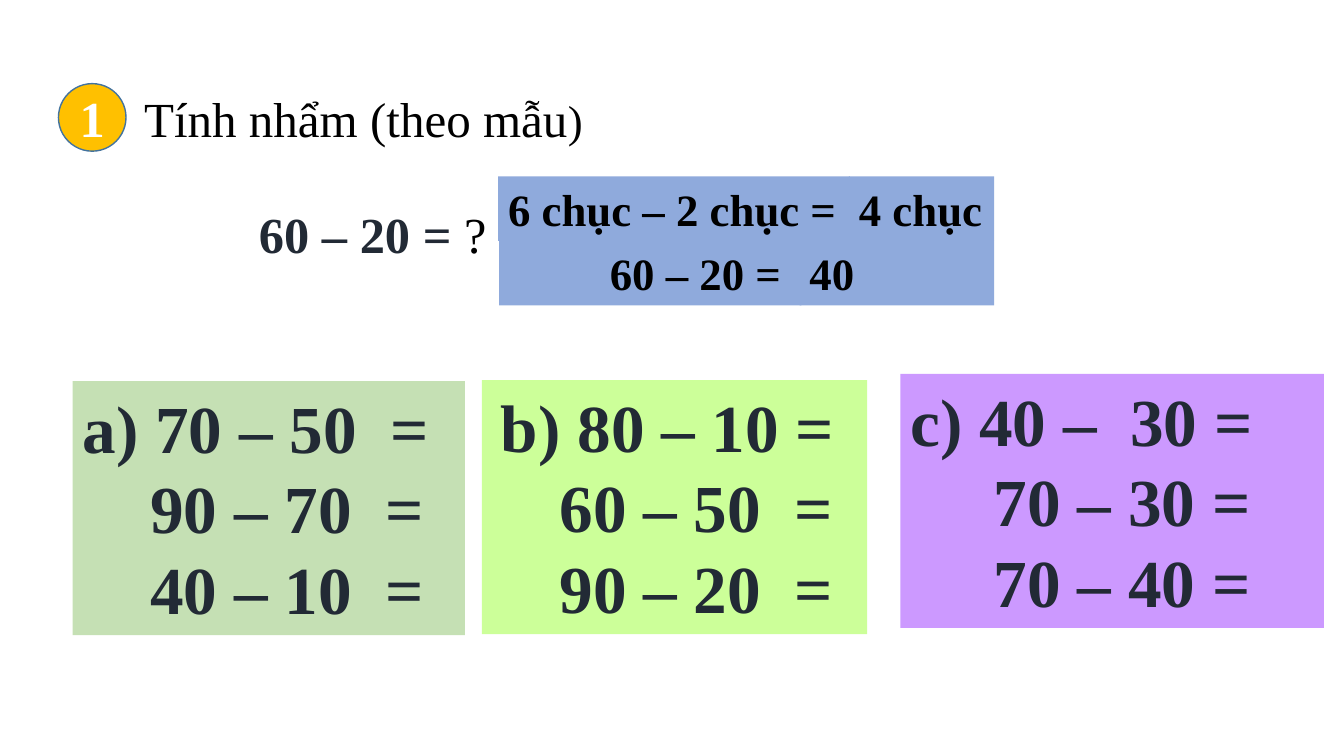
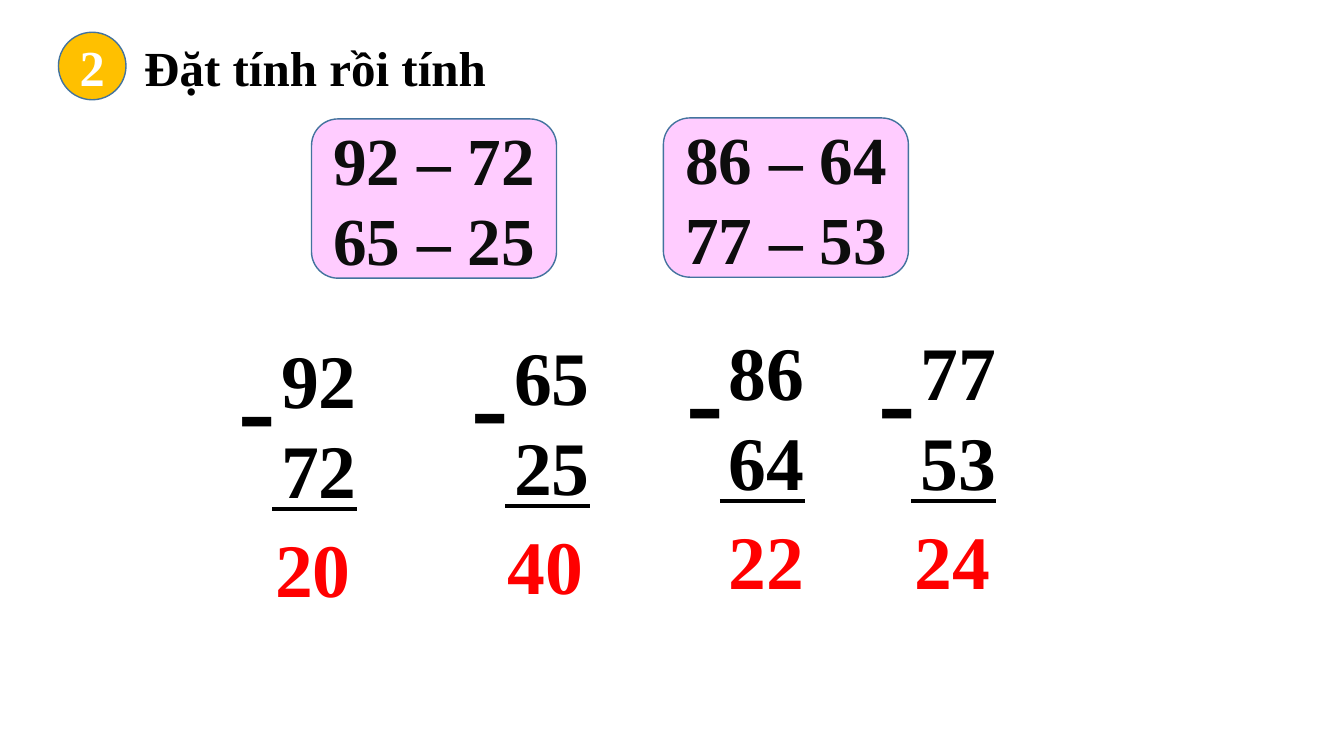
from dataclasses import dataclass

from lxml import etree
from pptx import Presentation
from pptx.dml.color import RGBColor
from pptx.enum.shapes import MSO_CONNECTOR, MSO_SHAPE
from pptx.enum.text import MSO_ANCHOR, MSO_AUTO_SIZE, PP_ALIGN
from pptx.oxml.ns import qn
from pptx.util import Inches, Pt

RECT = MSO_SHAPE.RECTANGLE
ROUNDED = MSO_SHAPE.ROUNDED_RECTANGLE
CIRCLE = MSO_SHAPE.FLOWCHART_CONNECTOR
STRAIGHT = MSO_CONNECTOR.STRAIGHT
TOP, MIDDLE = MSO_ANCHOR.TOP, MSO_ANCHOR.MIDDLE
LEFT, CENTER = PP_ALIGN.LEFT, PP_ALIGN.CENTER
NO_AUTOFIT = MSO_AUTO_SIZE.NONE
TITLE_ONLY = 5


@dataclass(frozen=True)
class Theme:
    font: str = "Times New Roman"
    # Colours
    black: str = "000000"
    white: str = "FFFFFF"
    navy: str = "222A35"
    charcoal: str = "0D0D0D"
    red: str = "FF0000"
    amber: str = "FFC000"
    outline: str = "43739E"
    blue: str = "8FAADC"
    sage: str = "C5E0B4"
    lime: str = "CCFF99"
    violet: str = "CC99FF"
    pink: str = "FFCCFF"
    # Type sizes in points
    bracket: int = 32
    sample: int = 32
    title: int = 35
    badge: int = 36
    exercise: int = 48
    digits: int = 54
    minus: int = 80


THEME = Theme()


def rgb(color):
    return RGBColor.from_string(color)


def write(frame, lines, size, color, bold=True, align=LEFT, anchor=TOP, wrap=True):
    """Fill a text frame with one paragraph per line, all in one style."""
    frame.auto_size = NO_AUTOFIT
    frame.word_wrap = wrap
    frame.vertical_anchor = anchor
    frame.text = "\n".join(lines)
    for paragraph in frame.paragraphs:
        paragraph.alignment = align
        font = paragraph.font
        font.name, font.size, font.bold = THEME.font, Pt(size), bold
        font.color.rgb = rgb(color)
    return frame.paragraphs


def add_text(slide, box, lines, size, color, **style):
    frame = slide.shapes.add_textbox(*map(Inches, box)).text_frame
    return write(frame, lines, size, color, **style)


def add_block(slide, kind, box, fill, lines, size, color, outline=None, **style):
    block = slide.shapes.add_shape(kind, *map(Inches, box))
    block.shadow.inherit = False
    block.fill.solid()
    block.fill.fore_color.rgb = rgb(fill)
    if outline:
        block.line.color.rgb = rgb(outline)
        block.line.width = Pt(1)
    else:
        block.line.fill.background()
    return write(block.text_frame, lines, size, color, **style)


def add_rule(slide, left, right, y):
    """Draw the line under a written subtraction."""
    ends = map(Inches, (left, y, right, y))
    rule = slide.shapes.add_connector(STRAIGHT, *ends)
    rule.line.color.rgb = rgb(THEME.black)
    rule.line.width = Pt(3)
    etree.SubElement(rule._element.spPr, qn("a:effectLst"))


def set_margin(paragraph, margin):
    paragraph._p.get_or_add_pPr().set("marL", str(Inches(margin)))


def set_tab_stops(paragraph, stops):
    """Set left tab stops, in inches from the text edge."""
    tabs = etree.Element(qn("a:tabLst"))
    for stop in stops:
        etree.SubElement(tabs, qn("a:tab"), pos=str(Inches(stop)), algn="l")
    paragraph._p.get_or_add_pPr().find(qn("a:defRPr")).addprevious(tabs)


def add_task_slide(deck, number, heading, top, bold):
    """Start a slide with its numbered badge and title."""
    slide = deck.slides.add_slide(deck.slide_layouts[TITLE_ONLY])
    title = slide.shapes.title
    title.left, title.top, title.width, title.height = map(
        Inches, (1.33, top, 4.75, 0.7))
    paragraph = write(title.text_frame, [heading], THEME.title, THEME.black,
                      bold=bold)[0]
    add_block(slide, CIRCLE, (0.58, top, 0.67, 0.67), THEME.amber, [number],
              THEME.badge, THEME.white, outline=THEME.outline,
              align=CENTER, anchor=MIDDLE)
    return slide, paragraph


def add_exercise(slide, box, fill, rows, first_stops, other_stops):
    """Add a panel whose first row has its own tab stops."""
    paragraphs = add_block(slide, RECT, box, fill, rows, THEME.exercise, THEME.navy)
    for index, paragraph in enumerate(paragraphs):
        set_tab_stops(paragraph, other_stops if index else first_stops)


def add_subtraction(slide, x, y, top_number, bottom_number, answer, answer_shift):
    """Write a subtraction in columns, with its answer below the line."""
    add_text(slide, (x, y, 0.96, 1.92), [top_number, bottom_number],
             THEME.digits, THEME.black, wrap=False)
    add_text(slide, (x - 0.42, y + 0.04, 0.58, 1.45), ["-"],
             THEME.minus, THEME.black, wrap=False)
    add_text(slide, (x + answer_shift, y + 1.88, 0.96, 1.01), [answer],
             THEME.digits, THEME.red, wrap=False)
    add_rule(slide, x + 0.01, x + 0.85, y + 1.8)


def build_mental_arithmetic(deck):
    slide, title = add_task_slide(deck, "1", "Tính nhẩm (theo mẫu", 0.83, False)
    bracket = title.add_run()
    bracket.text = ")"
    bracket.font.size = Pt(THEME.bracket)

    # Worked sample
    question = add_text(slide, (2.47, 1.97, 2.67, 0.71), ["60 – 20 = "],
                        THEME.badge, THEME.navy)[0]
    unknown = question.add_run()
    unknown.text = "?"
    unknown.font.bold = False
    unknown.font.color.rgb = rgb(THEME.black)
    sample_steps = (
        (4.94, 1.75, 3.49, "6 chục – 2 chục =", 0),
        (8.42, 1.75, 1.44, "4 chục", 0),
        (4.95, 2.39, 3.00, "60 – 20 =", 1),
        (7.93, 2.39, 1.93, "40", 0),
    )
    for left, top, width, step, margin in sample_steps:
        paragraph = add_block(slide, RECT, (left, top, width, 0.64), THEME.blue,
                              [step], THEME.sample, THEME.black)[0]
        set_margin(paragraph, margin)

    # Exercises
    add_exercise(slide, (0.72, 3.78, 3.89, 2.52), THEME.sage,
                 ["a) 70 – 50\t=", "\t90 – 70\t=", "\t40 – 10\t="],
                 (3.05,), (0.67, 3))
    add_exercise(slide, (4.78, 3.77, 3.82, 2.52), THEME.lime,
                 ["\tb) 80 – 10 =", "\t60 – 50\t=", "\t90 – 20\t="],
                 (0.09,), (0.67, 3))
    add_exercise(slide, (8.93, 3.71, 4.2, 2.52), THEME.violet,
                 ["c) 40 –\t30 =", "\t70 – 30 =", "\t70 – 40 ="],
                 (2.18,), (0.83,))


def build_column_subtraction(deck):
    slide, _ = add_task_slide(deck, "2", "Đặt tính rồi tính", 0.32, True)

    # Problems to set out
    problems = (
        (3.09, 1.18, ["92 – 72", "65 – 25"]),
        (6.58, 1.17, ["86 – 64", "77 – 53"]),
    )
    for left, top, lines in problems:
        add_block(slide, ROUNDED, (left, top, 2.43, 1.58), THEME.pink, lines,
                  THEME.exercise, THEME.charcoal, outline=THEME.outline,
                  align=CENTER, anchor=MIDDLE)

    # Written subtractions
    subtractions = (
        (2.69, 3.25, "92", "72", "20", -0.06),
        (5.00, 3.22, "65", "25", "40", -0.06),
        (7.13, 3.17, "86", "64", "22", 0),
        (9.03, 3.17, "77", "53", "24", -0.06),
    )
    for subtraction in subtractions:
        add_subtraction(slide, *subtraction)


def main():
    deck = Presentation()
    deck.slide_width, deck.slide_height = Inches(13.33), Inches(7.5)
    build_mental_arithmetic(deck)
    build_column_subtraction(deck)
    deck.save("out.pptx")


if __name__ == "__main__":
    main()
